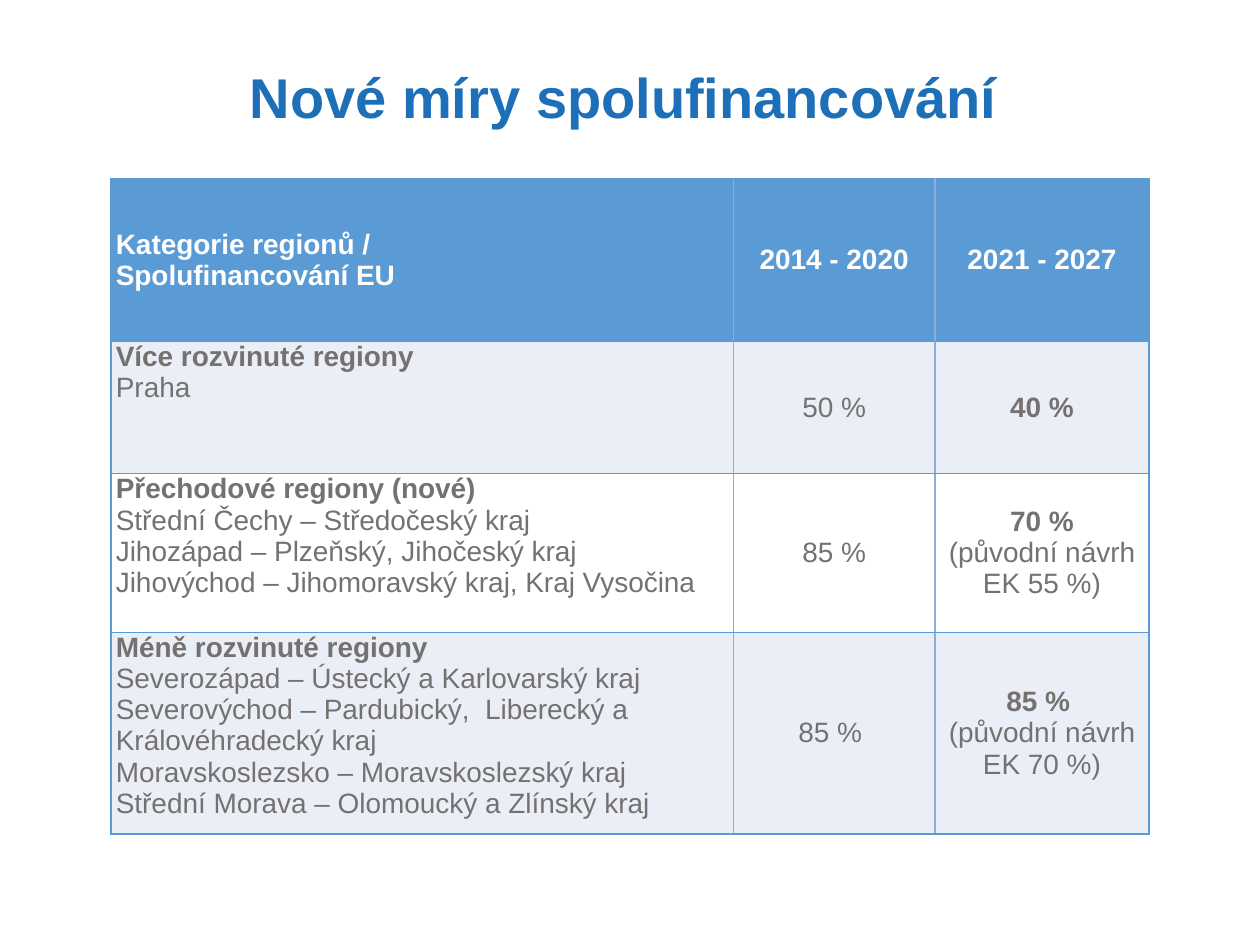
from dataclasses import dataclass

from lxml.etree import SubElement
from pptx import Presentation
from pptx.dml.color import RGBColor
from pptx.enum.text import MSO_ANCHOR, PP_ALIGN
from pptx.oxml.ns import qn
from pptx.util import Inches, Pt

TITLE_BLUE = RGBColor(0x1D, 0x70, 0xB8)
HEADER_BLUE = RGBColor(0x5B, 0x9B, 0xD5)
DIVIDER_BLUE = RGBColor(0x8F, 0xAA, 0xDC)
BAND_BLUE = RGBColor(0xEA, 0xEF, 0xF7)
TEXT_GREY = RGBColor(0x76, 0x71, 0x71)
WHITE = RGBColor(0xFF, 0xFF, 0xFF)
FONT = "Arial"

COLUMN_WIDTHS = (4.94, 1.6, 1.7)
ROW_HEIGHTS = (1.29, 1.05, 1.26, 1.57)


@dataclass(frozen=True)
class Line:
    text: str
    bold: bool = False
    same_paragraph: bool = False


@dataclass(frozen=True)
class Row:
    category: tuple[Line, ...]
    old_rate: tuple[Line, ...]
    new_rate: tuple[Line, ...]


ROWS = (
    Row(
        (Line("Kategorie regionů /", True), Line("Spolufinancování EU", True)),
        (Line("2014 - 2020", True),),
        (Line("2021 - 2027", True),),
    ),
    Row(
        (Line("Více rozvinuté regiony ", True), Line("Praha", same_paragraph=True)),
        (Line("50 %"),),
        (Line("40 %", True),),
    ),
    Row(
        (
            Line("Přechodové regiony (nové)", True),
            Line("Střední Čechy – Středočeský kraj", same_paragraph=True),
            Line("Jihozápad – Plzeňský, Jihočeský kraj"),
            Line("Jihovýchod – Jihomoravský kraj, Kraj Vysočina"),
        ),
        (Line("85 %"),),
        (Line("70 %", True), Line("(původní návrh EK 55 %)")),
    ),
    Row(
        (
            Line("Méně rozvinuté regiony", True),
            Line("Severozápad – Ústecký a Karlovarský kraj", same_paragraph=True),
            Line("Severovýchod – Pardubický,  Liberecký a Královéhradecký kraj"),
            Line("Moravskoslezsko – Moravskoslezský kraj", same_paragraph=True),
            Line("Střední Morava – Olomoucký a Zlínský kraj"),
        ),
        (Line("85 % "),),
        (Line("85 % ", True), Line("(původní návrh EK 70 %)")),
    ),
)


def add_run(paragraph, text: str, size: int, color: RGBColor, bold: bool) -> None:
    run = paragraph.add_run()
    run.text = text
    run.font.name = FONT
    run.font.size = Pt(size)
    run.font.bold = bold
    run.font.color.rgb = color


def write_lines(frame, lines: tuple[Line, ...], color: RGBColor, align: PP_ALIGN) -> None:
    paragraph = frame.paragraphs[0]
    for index, line in enumerate(lines):
        if line.same_paragraph:
            paragraph.add_line_break()
        elif index:
            paragraph = frame.add_paragraph()
        paragraph.alignment = align
        add_run(paragraph, line.text, 16, color, line.bold)


def set_borders(cell, left: RGBColor, right: RGBColor) -> None:
    """Draw the given side borders and blue top and bottom ones."""
    properties = cell._tc.get_or_add_tcPr()
    sides = {"a:lnL": left, "a:lnR": right, "a:lnT": HEADER_BLUE, "a:lnB": HEADER_BLUE}
    for position, (tag, color) in enumerate(sides.items()):
        border = SubElement(properties, qn(tag), w=str(Pt(1)))
        fill = SubElement(border, qn("a:solidFill"))
        SubElement(fill, qn("a:srgbClr"), val=str(color))
        properties.insert(position, border)


def add_title(slide, text: str) -> None:
    box = slide.shapes.add_textbox(Inches(0.66), Inches(0.29), Inches(8.58), Inches(1.01))
    frame = box.text_frame
    frame.word_wrap = True
    frame.vertical_anchor = MSO_ANCHOR.MIDDLE
    paragraph = frame.paragraphs[0]
    paragraph.alignment = PP_ALIGN.CENTER
    paragraph.line_spacing = 0.9
    add_run(paragraph, text, 32, TITLE_BLUE, True)


def fill_row(table, row_index: int, row: Row) -> None:
    is_header = row_index == 0
    background = HEADER_BLUE if is_header else BAND_BLUE if row_index % 2 else WHITE
    last_column = len(COLUMN_WIDTHS) - 1
    for column, lines in enumerate((row.category, row.old_rate, row.new_rate)):
        cell = table.cell(row_index, column)
        cell.margin_left = cell.margin_right = Inches(0.04)
        cell.margin_top = cell.margin_bottom = Inches(0)
        top_aligned = column == 0 and not is_header
        cell.vertical_anchor = MSO_ANCHOR.TOP if top_aligned else MSO_ANCHOR.MIDDLE
        cell.fill.solid()
        cell.fill.fore_color.rgb = background
        set_borders(
            cell,
            left=HEADER_BLUE if column == 0 else DIVIDER_BLUE,
            right=HEADER_BLUE if column == last_column else DIVIDER_BLUE,
        )
        write_lines(
            cell.text_frame,
            lines,
            WHITE if is_header else TEXT_GREY,
            PP_ALIGN.CENTER if column else PP_ALIGN.LEFT,
        )


def add_rates_table(slide) -> None:
    table = slide.shapes.add_table(
        len(ROWS), len(COLUMN_WIDTHS), Inches(0.88), Inches(1.42),
        Inches(sum(COLUMN_WIDTHS)), Inches(sum(ROW_HEIGHTS)),
    ).table
    for column, width in zip(table.columns, COLUMN_WIDTHS):
        column.width = Inches(width)
    for index, (height, row) in enumerate(zip(ROW_HEIGHTS, ROWS)):
        table.rows[index].height = Inches(height)
        fill_row(table, index, row)


def main() -> None:
    presentation = Presentation()
    presentation.slide_width = Inches(10)
    presentation.slide_height = Inches(7.5)
    slide = presentation.slides.add_slide(presentation.slide_layouts[6])
    add_title(slide, "Nové míry spolufinancování")
    add_rates_table(slide)
    presentation.save("out.pptx")


if __name__ == "__main__":
    main()
